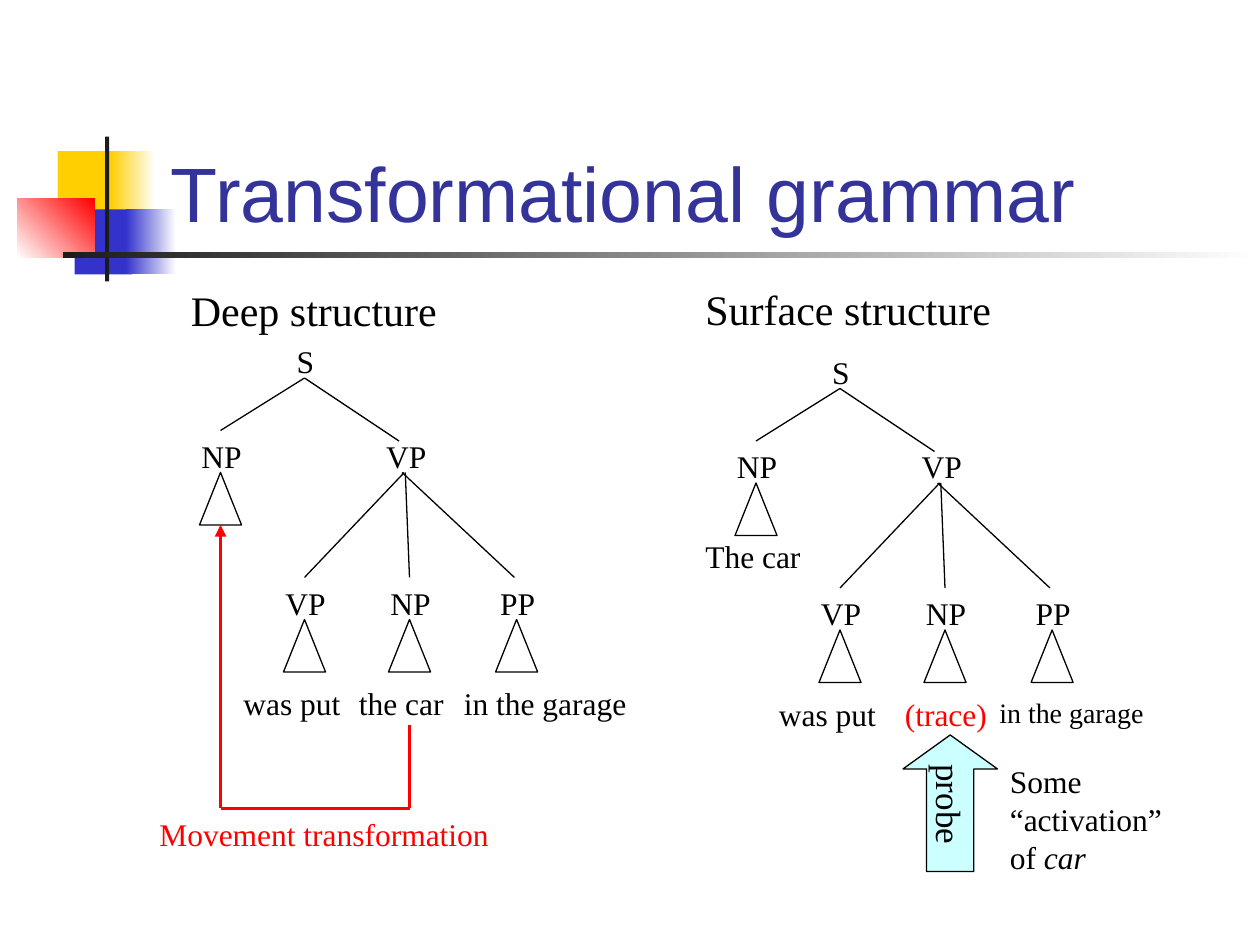
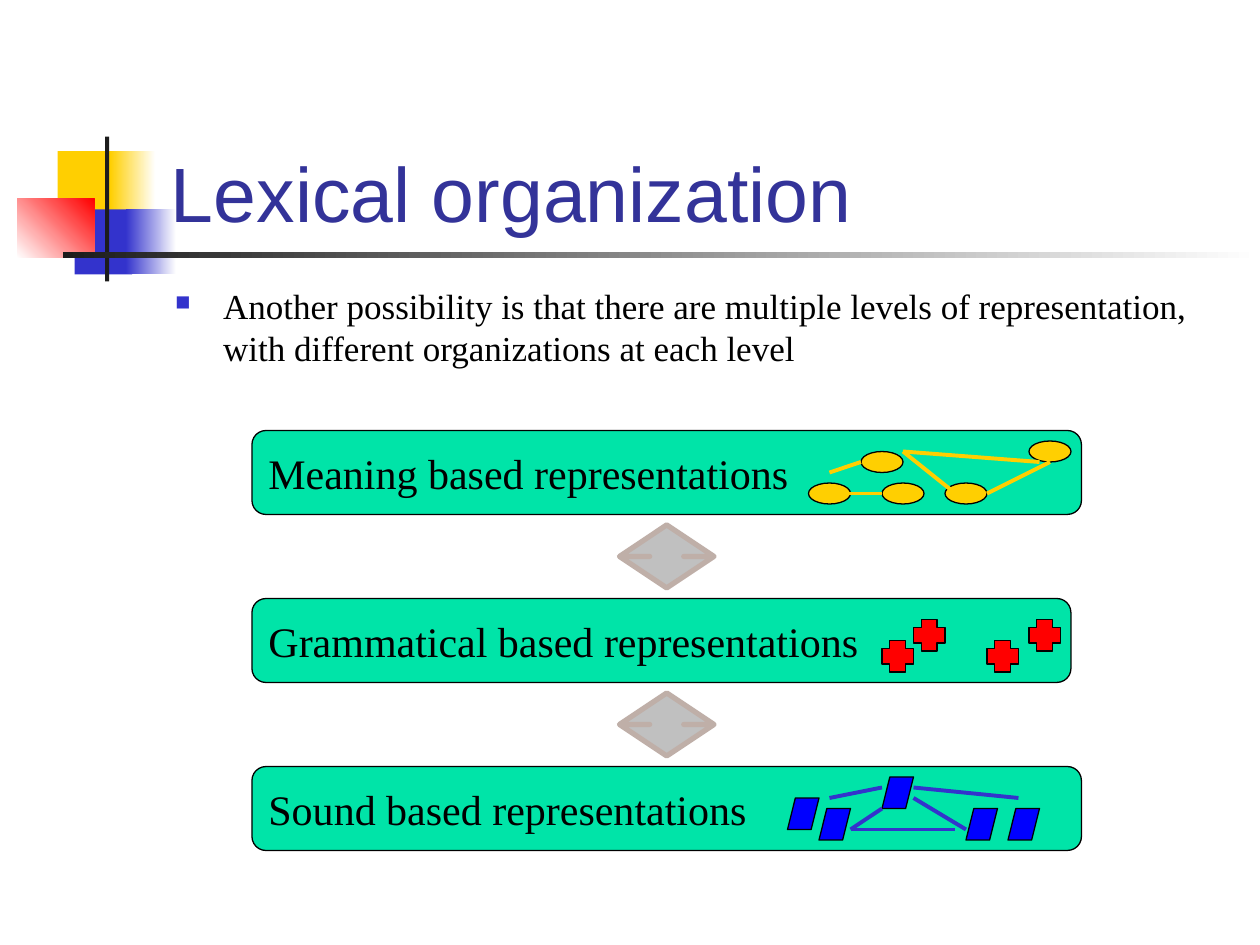
from lxml import etree
from pptx import Presentation
from pptx.dml.color import RGBColor
from pptx.enum.shapes import MSO_CONNECTOR, MSO_SHAPE
from pptx.enum.text import MSO_ANCHOR, PP_ALIGN
from pptx.oxml.ns import qn
from pptx.util import Inches, Pt

WIDTH, HEIGHT = Inches(10), Inches(7.5)
COLUMNS, ROWS = 120, 90
BLANK_LAYOUT = 6
SERIF, SANS = "Times New Roman", "Arial"
BLACK, WHITE, RED, YELLOW = "000000", "FFFFFF", "FF0000", "FFCF01"
INDIGO, CHARCOAL, TITLE_BLUE = "3333CC", "1C1C1C", "333399"
GREEN, BLUE, CYAN, SILVER, TAUPE = "00E4A8", "0000FF", "CCFFFF", "C0C0C0", "BFAFA8"

STRAIGHT = MSO_CONNECTOR.STRAIGHT
RECTANGLE, TRIANGLE = MSO_SHAPE.RECTANGLE, MSO_SHAPE.ISOSCELES_TRIANGLE
ROUNDED, ELLIPSE = MSO_SHAPE.FLOWCHART_ALTERNATE_PROCESS, MSO_SHAPE.OVAL
PLUS, PARALLELOGRAM = MSO_SHAPE.CROSS, MSO_SHAPE.PARALLELOGRAM
UP_ARROW, UP_DOWN_ARROW = MSO_SHAPE.UP_ARROW, MSO_SHAPE.UP_DOWN_ARROW
TOP, MIDDLE, BOTTOM = MSO_ANCHOR.TOP, MSO_ANCHOR.MIDDLE, MSO_ANCHOR.BOTTOM
LEFT, CENTER = PP_ALIGN.LEFT, PP_ALIGN.CENTER

TREE_LEAVES = (("NP", -8, 9), ("VP", 0, 23), ("NP", 10, 23), ("PP", 20.2, 23))
TREE_BRANCHES = (
    (0, 0, -8, 5), (0, 0, 9, 6),
    (9.5, 9, 0, 19), (9.3, 9, 20, 19), (9.6, 9, 10, 19),
)
LEVEL_TOP, LEVEL_STEP, LEVEL_HEIGHT = 41, 16, 8
LEVELS = (
    {
        "text": "Meaning based representations", "width": 79,
        "token": (ELLIPSE, 4, 2, YELLOW),
        "places": ((77, 5), (84, 5), (90, 5), (82, 2), (98, 1)),
        "links": ((80, 6, 84, 6), (79, 4, 82, 3), (100, 3, 94, 6),
                  (86, 2, 99, 3), (86, 2, 91, 6)),
        "link_color": YELLOW,
    },
    {
        "text": "Grammatical based representations", "width": 78,
        "token": (PLUS, 3, 3, RED),
        "places": ((84, 4), (87, 2), (94, 4), (98, 2)),
        "links": (), "link_color": RED,
    },
    {
        "text": "Sound based representations", "width": 79,
        "token": (PARALLELOGRAM, 3, 3, BLUE),
        "places": ((75, 3), (84, 1), (92, 4), (96, 4), (78, 4)),
        "links": ((81, 6, 84, 4), (79, 3, 84, 2), (87, 3, 92, 6),
                  (87, 2, 97, 3), (81, 6, 91, 6)),
        "link_color": INDIGO,
    },
)


def color(value):
    """Turn a hex string into a colour."""
    return RGBColor.from_string(value)


def cells(left, top, width, height):
    """Turn columns and rows of the grid into slide lengths."""
    return (int(WIDTH * left / COLUMNS), int(HEIGHT * top / ROWS),
            int(WIDTH * width / COLUMNS), int(HEIGHT * height / ROWS))


def write(shape, runs, size, ink=BLACK, font=SERIF, anchor=TOP, align=LEFT, wrap=True):
    """Write (text, italic) runs into a shape and return the paragraph."""
    frame = shape.text_frame
    frame.word_wrap = wrap
    frame.vertical_anchor = anchor
    paragraph = frame.paragraphs[0]
    paragraph.alignment = align
    for text, italic in runs:
        run = paragraph.add_run()
        run.text = text
        run.font.name = font
        run.font.size = Pt(size)
        run.font.italic = italic
        run.font.color.rgb = color(ink)
    return paragraph


def add_text(slide, box, text, size, **style):
    """Add a text box with a single run."""
    shape = slide.shapes.add_textbox(*cells(*box))
    return write(shape, [(text, False)], size, **style)


def add_phrase(slide, box, text, size=18, ink=BLACK):
    """Add a tightly spaced phrase."""
    paragraph = add_text(slide, box, text, size, ink=ink)
    paragraph.line_spacing = 0.9
    paragraph.space_before = Pt(size * 0.2)


def add_figure(slide, kind, box, fill=None, line=BLACK, weight=0.75, adjustments=()):
    """Add a preset shape with a plain fill and outline."""
    shape = slide.shapes.add_shape(kind, *cells(*box))
    shape.shadow.inherit = False
    for index, value in enumerate(adjustments):
        shape.adjustments[index] = value
    if fill:
        shape.fill.solid()
        shape.fill.fore_color.rgb = color(fill)
    else:
        shape.fill.background()
    if line:
        shape.line.color.rgb = color(line)
        shape.line.width = Pt(weight)
    else:
        shape.line.fill.background()
    return shape


def add_fade(slide, box, start, end, angle=0):
    """Add a borderless rectangle that fades between two colours."""
    fill = add_figure(slide, RECTANGLE, box, line=None).fill
    fill.gradient()
    fill.gradient_angle = angle
    for stop, value in zip(fill.gradient_stops, (start, end)):
        stop.color.rgb = color(value)


def add_line(slide, ends, ink=BLACK, weight=0.75, arrow=False):
    """Add a straight line between two grid points."""
    connector = slide.shapes.add_connector(STRAIGHT, *cells(*ends))
    connector.line.color.rgb = color(ink)
    connector.line.width = Pt(weight)
    properties = connector._element.spPr
    etree.SubElement(properties, qn("a:effectLst"))
    if arrow:
        etree.SubElement(properties.find(qn("a:ln")), qn("a:tailEnd"), type="triangle")


def add_bullet(paragraph, ink):
    """Give a paragraph a hanging square bullet."""
    properties = paragraph._p.get_or_add_pPr()
    properties.set("marL", str(Inches(0.38)))
    properties.set("indent", str(-Inches(0.38)))
    bullet_color = etree.SubElement(properties, qn("a:buClr"))
    etree.SubElement(bullet_color, qn("a:srgbClr"), val=ink)
    etree.SubElement(properties, qn("a:buSzPct"), val="60000")
    etree.SubElement(properties, qn("a:buChar"), char="■")


def add_titled_slide(presentation, title):
    """Add a slide with the shared emblem, rule and title."""
    slide = presentation.slides.add_slide(presentation.slide_layouts[BLANK_LAYOUT])
    add_figure(slide, RECTANGLE, (5.5, 14.4, 5.8, 6.2), YELLOW, None)
    add_fade(slide, (10.5, 14.4, 4.3, 6.2), YELLOW, WHITE)
    add_figure(slide, RECTANGLE, (7.1, 19.95, 5.5, 6.2), INDIGO, None)
    add_fade(slide, (12, 19.95, 4.8, 6.2), INDIGO, WHITE)
    add_fade(slide, (1.65, 18.95, 7.35, 5.6), WHITE, RED, 45)
    add_figure(slide, RECTANGLE, (10, 13, 0.4, 13.8), CHARCOAL, None)
    add_fade(slide, (6, 24, 114, 0.6), CHARCOAL, WHITE)
    add_text(slide, (15.1, 8.2, 102.2, 15), title, 44,
             ink=TITLE_BLUE, font=SANS, anchor=BOTTOM)
    return slide


def add_tree(slide, left, top):
    """Draw a phrase structure tree whose S node ends at the given cell."""
    for x1, y1, x2, y2 in TREE_BRANCHES:
        add_line(slide, (left + x1, top + y1, left + x2, top + y2))
    for text, x, y in (("S", 0, 0), ("VP", 9.6, 9)) + TREE_LEAVES:
        add_text(slide, (left + x - 3, top + y - 4, 6.2, 4.8), text, 18,
                 align=CENTER, wrap=False)
    for text, x, y in TREE_LEAVES:
        add_figure(slide, TRIANGLE, (left + x - 2, top + y, 4, 5))


def add_level(slide, top, level):
    """Draw one level of representation with its linked tokens."""
    panel = add_figure(slide, ROUNDED, (24, top, level["width"], LEVEL_HEIGHT), GREEN)
    write(panel, [(level["text"], False)], 24, anchor=MIDDLE)
    kind, width, height, fill = level["token"]
    for column, row in level["places"]:
        add_figure(slide, kind, (column, top + row, width, height), fill)
    for x1, y1, x2, y2 in level["links"]:
        add_line(slide, (x1, top + y1, x2, top + y2), level["link_color"], 2.25)


def build_grammar_slide(presentation):
    """Compare deep and surface structure."""
    slide = add_titled_slide(presentation, "Transformational grammar")
    add_phrase(slide, (17, 27, 29, 8), "Deep structure", 24)
    add_phrase(slide, (66, 27, 32, 6), "Surface structure", 24)
    add_tree(slide, 29, 36)
    add_tree(slide, 80, 37)

    add_phrase(slide, (22, 65, 14, 5), "was put")
    add_phrase(slide, (33, 65, 11, 5), "the car")
    add_phrase(slide, (43, 65, 19, 4), "in the garage")
    add_phrase(slide, (66, 51, 13, 5), "The car")
    add_phrase(slide, (73, 66, 14, 5), "was put")
    add_phrase(slide, (85, 66, 12, 5), "(trace)", ink=RED)
    add_phrase(slide, (94, 66, 18, 4), "in the garage", 16)

    add_line(slide, (39, 69, 39, 77), RED, 2.25)
    add_line(slide, (39, 77, 21, 77), RED, 2.25)
    add_line(slide, (21, 77, 21, 50), RED, 2.25, arrow=True)
    add_text(slide, (14, 77, 36, 4.8), "Movement transformation", 18, ink=RED)

    probe = add_figure(slide, UP_ARROW, (86, 70, 9, 13), CYAN, adjustments=(0.5, 0.36))
    write(probe, [("probe", False)], 20, anchor=MIDDLE, align=CENTER, wrap=False)
    probe.text_frame._txBody.bodyPr.set("vert", "eaVert")
    note = slide.shapes.add_textbox(*cells(95, 72, 18, 12))
    write(note, [("Some “activation” of ", False), ("car", True)], 18)


def build_lexicon_slide(presentation):
    """Show the levels of lexical organization."""
    slide = add_titled_slide(presentation, "Lexical organization")
    paragraph = add_text(
        slide, (15.5, 26.5, 100.4, 12.5),
        "Another possibility is that there are multiple levels of representation, "
        "with different organizations at each level", 20)
    paragraph.space_before = Pt(4)
    add_bullet(paragraph, INDIGO)
    for index, level in enumerate(LEVELS):
        top = LEVEL_TOP + index * LEVEL_STEP
        add_level(slide, top, level)
        if index:
            add_figure(slide, UP_DOWN_ARROW, (59, top - 7, 9, 6), SILVER, TAUPE, 3,
                       (0.53, 0.36))


def main():
    """Build and save the presentation."""
    presentation = Presentation()
    presentation.slide_width, presentation.slide_height = WIDTH, HEIGHT
    build_grammar_slide(presentation)
    build_lexicon_slide(presentation)
    presentation.save("out.pptx")


if __name__ == "__main__":
    main()
